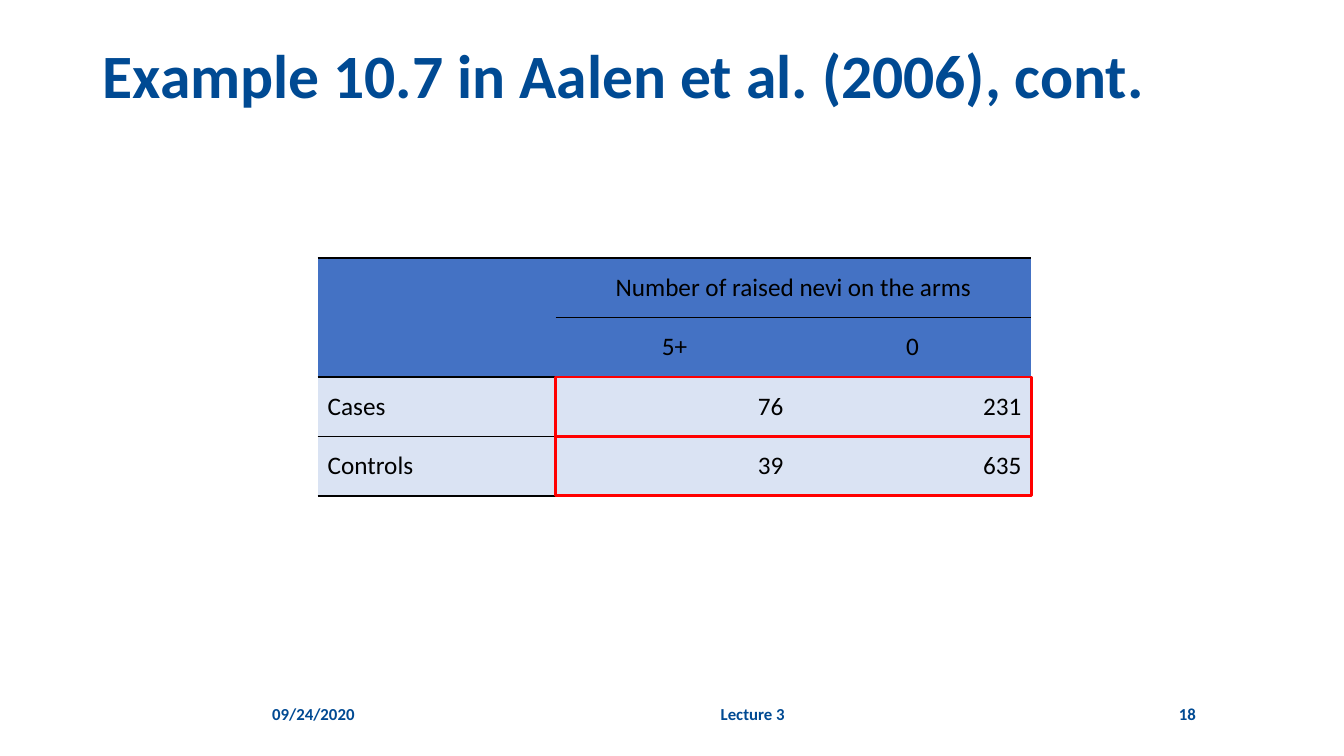
from lxml import etree
from pptx import Presentation
from pptx import util as u
from pptx.dml.color import RGBColor
from pptx.enum import shapes, text
from pptx.oxml import ns

NAVY = RGBColor(0x00, 0x4A, 0x93)
BLUE = RGBColor(0x44, 0x72, 0xC4)
PALE = RGBColor(0xDA, 0xE3, 0xF3)
BLACK = RGBColor(0, 0, 0)
RED = RGBColor(0xFF, 0, 0)

PX = 9144  # EMU per px, 100 px to the inch
LEFT, CENTER, RIGHT = text.PP_ALIGN.LEFT, text.PP_ALIGN.CENTER, text.PP_ALIGN.RIGHT
TOP, MIDDLE = text.MSO_ANCHOR.TOP, text.MSO_ANCHOR.MIDDLE


class Deck:
    face = "Calibri"

    def __init__(self, wide, high):
        self.prs = Presentation()
        self.prs.slide_width, self.prs.slide_height = wide * PX, high * PX
        self.slide = self.prs.slides.add_slide(self.prs.slide_layouts[6])

    def style(self, para, size, color, bold, align):
        para.alignment = align
        font = para.font
        font.name, font.size, font.bold = self.face, u.Pt(size), bold
        font.color.rgb = color

    def label(self, words, box, size, align=LEFT, anchor=MIDDLE):
        frame = self.slide.shapes.add_textbox(*(n * PX for n in box)).text_frame
        frame.word_wrap = True
        frame.vertical_anchor = anchor
        para = frame.paragraphs[0]
        para.text = words
        para.line_spacing = 0.9 if anchor == TOP else 1.0
        self.style(para, size, NAVY, True, align)

    def frame(self, box):
        rect = self.slide.shapes.add_shape(
            shapes.MSO_SHAPE.RECTANGLE, *(n * PX for n in box))
        rect.shadow.inherit = False
        rect.fill.background()
        rect.line.color.rgb = RED
        rect.line.width = u.Pt(2)

    def edge(self, cell, side, width):
        props = cell._tc.get_or_add_tcPr()
        line = etree.SubElement(props, ns.qn("a:ln" + side), w=str(u.Pt(width)))
        if width:
            fill = etree.SubElement(line, ns.qn("a:solidFill"))
            etree.SubElement(fill, ns.qn("a:srgbClr"), val=str(BLACK))
        else:
            etree.SubElement(line, ns.qn("a:noFill"))

    def table(self, rows, left, top, wide, high, rules):
        cols = len(rows[0])
        grid = self.slide.shapes.add_table(
            len(rows), cols, left * PX, top * PX,
            cols * wide * PX, len(rows) * high * PX).table
        for col in grid.columns:
            col.width = wide * PX
        for r, row in enumerate(rows):
            grid.rows[r].height = high * PX
            for c, words in enumerate(row):
                cell = grid.cell(r, c)
                widths = (0, 0, rules[r][c], rules[r + 1][c])
                for side, width in zip("LRTB", widths):
                    self.edge(cell, side, width)
                head = r < 2
                cell.fill.solid()
                cell.fill.fore_color.rgb = BLUE if head else PALE
                cell.vertical_anchor = MIDDLE
                cell.text = words
                align = CENTER if head else RIGHT if c else LEFT
                self.style(cell.text_frame.paragraphs[0], 18, BLACK, False, align)
        return grid


def main():
    deck = Deck(1333, 750)

    # Title
    deck.label("Example 10.7 in Aalen et al. (2006), cont.",
               (92, 40, 1150, 145), 44, anchor=TOP)

    # Table of nevi counts
    left, top, wide, high = 315, 256, 236, 59
    rows = [("", "Number of raised nevi on the arms", ""),
            ("", "5+", "0"),
            ("Cases", "76", "231"),
            ("Controls", "39", "635")]
    thick, thin = 1.5, 0.5
    rules = [(thick,) * 3, (0, thin, thin), (thick,) * 3, (thin,) * 3, (thick,) * 3]
    grid = deck.table(rows, left, top, wide, high, rules)
    grid.cell(0, 0).merge(grid.cell(1, 0))
    grid.cell(0, 1).merge(grid.cell(0, 2))

    # Footer
    deck.label("09/24/2020", (260, 688, 131, 40), 12)
    deck.label("Lecture 3", (407, 688, 679, 40), 12, CENTER)
    deck.label("18", (1102, 688, 94, 40), 12, RIGHT)

    # Red frames round the count rows
    for r in (2, 3):
        deck.frame((left + wide, top + r * high, 2 * wide, high))

    deck.prs.save("out.pptx")


if __name__ == "__main__":
    main()
